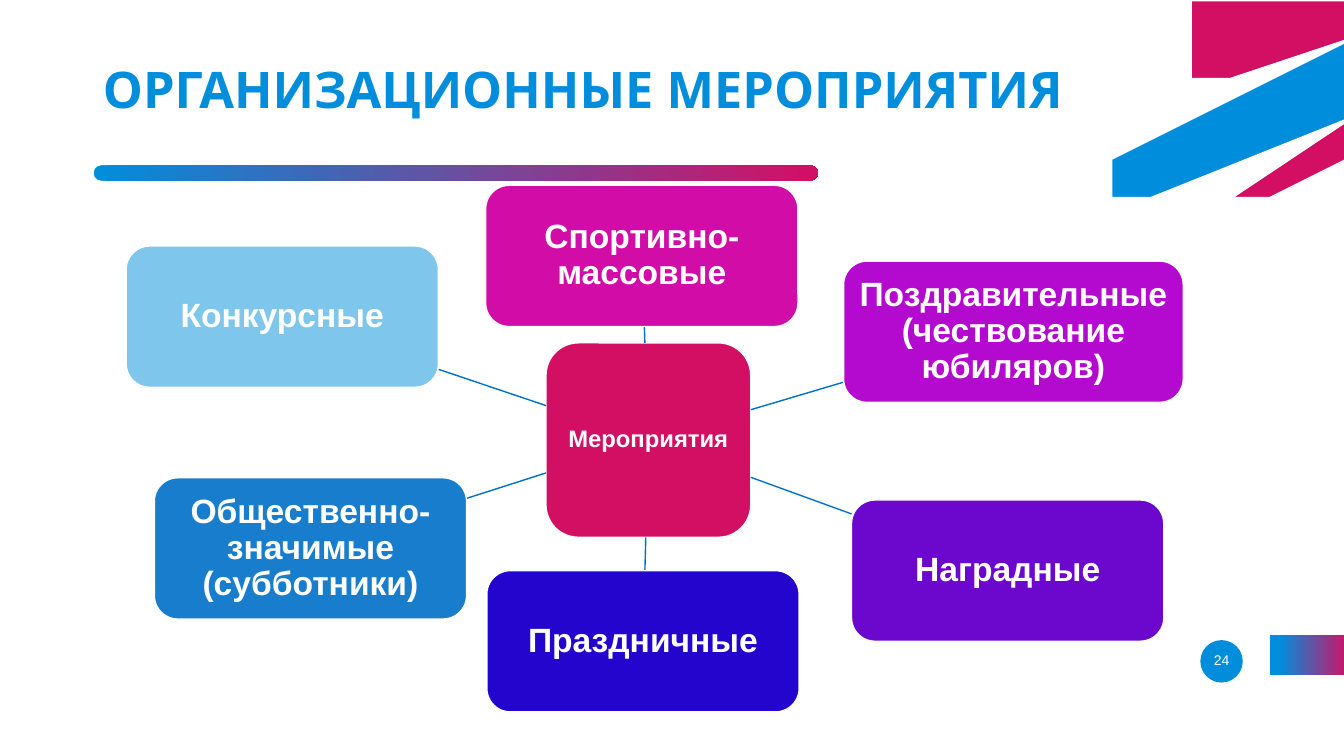
"""Build the slide of organisational events arranged around a central hub."""
from lxml import etree
from pptx import Presentation
from pptx.dml.color import RGBColor
from pptx.enum import shapes, text
from pptx.oxml import ns
from pptx.util import Cm, Pt

COLOURS = {
    "blue": "008EDC", "crimson": "D30F64", "white": "FFFFFF", "link": "006FC9",
    "magenta": "D20CA7", "purple": "B40AD0", "violet": "6C07CE",
    "indigo": "2305CD", "azure": "197DCE", "sky": "7FC6ED",
}


def paint(shape, colour, line_width=0):
    """Fill with one colour, or with a gradient when given a pair and its start."""
    shape.shadow.inherit = False
    if isinstance(colour, str):
        shape.fill.solid()
        shape.fill.fore_color.rgb = RGBColor.from_string(COLOURS[colour])
    else:
        shape.fill.gradient()
        shape.fill.gradient_angle = 0
        for stop, position, name in zip(shape.fill.gradient_stops, (colour[0], 1), colour[1:]):
            stop.position = position
            stop.color.rgb = RGBColor.from_string(COLOURS[name])
    if line_width:
        shape.line.color.rgb = RGBColor.from_string(COLOURS["white"])
        shape.line.width = Pt(line_width)
    else:
        shape.line.fill.background()


def write(shape, words, size, margin):
    """Centre white Arial text in a shape."""
    frame = shape.text_frame
    frame.word_wrap = True
    frame.vertical_anchor = text.MSO_ANCHOR.MIDDLE
    frame.margin_left = frame.margin_right = Cm(margin)
    frame.margin_top = frame.margin_bottom = Cm(margin)
    para = frame.paragraphs[0]
    para.alignment = text.PP_ALIGN.CENTER
    para.line_spacing = 0.9
    span = para.add_run()
    span.text = words
    span.font.name = "Arial"
    span.font.size = Pt(size)
    span.font.bold = size > 10
    span.font.color.rgb = RGBColor.from_string(COLOURS["white"])


deck = Presentation()
deck.slide_width, deck.slide_height = Cm(33.87), Cm(19.05)
page = deck.slides.add_slide(deck.slide_layouts[5])

outlines = [
    ("crimson", 2, [(30.18, 1.42), (30.18, 1.42, 30.4, 1.93, 30.91, 2.29), (33.87, 0.86),
                    (33.87, 0), (29.87, 0), (29.82, 0.38, 29.87, 0.84, 30.12, 1.35)]),
    ("blue", 2, [(28.47, 3.53), (28.47, 3.53, 27.56, 3.99, 27.97, 4.8), (27.97, 4.83),
                 (27.97, 4.83, 28.37, 5.64, 29.31, 5.18), (33.87, 2.97), (33.87, 0.91)]),
    ("crimson", 2, [(33.87, 3.2), (31.17, 4.52), (31.17, 4.52, 30.81, 4.7, 30.99, 5),
                    (30.99, 5.03), (30.99, 5.03, 31.14, 5.36, 31.5, 5.18), (33.87, 4.01)]),
    ((0.12, "blue", "crimson"), 0,
     [(32.05, 17.2), (33.87, 17.2), (33.87, 16.1), (32.05, 16.1),
      (32.05, 16.1, 31.52, 16.1, 31.52, 16.64), (31.52, 16.66),
      (31.52, 16.66, 31.52, 17.2, 32.05, 17.2)]),
]
for colour, rim, steps in outlines:
    points = []
    for step in steps:
        if len(step) == 2:
            points.append(step)
            continue
        x0, y0 = points[-1]
        x1, y1, x2, y2, x3, y3 = step
        for t in (i / 12 for i in range(1, 13)):
            a, b, c, d = (1 - t) ** 3, 3 * t * (1 - t) ** 2, 3 * t * t * (1 - t), t ** 3
            points.append((a * x0 + b * x1 + c * x2 + d * x3,
                           a * y0 + b * y1 + c * y2 + d * y3))
    builder = page.shapes.build_freeform(*points[0], scale=Cm(1))
    builder.add_line_segments(points[1:], close=True)
    paint(builder.convert_to_shape(), colour, rim)

rule = page.shapes.add_shape(
    shapes.MSO_SHAPE.ROUNDED_RECTANGLE, Cm(2.36), Cm(4.17), Cm(18.26), Cm(0.38))
rule.adjustments[0] = 0.5
paint(rule, (0, "blue", "crimson"))

badge = page.shapes.add_shape(shapes.MSO_SHAPE.OVAL, Cm(30.25), Cm(16.13), Cm(1.07), Cm(1.07))
paint(badge, "blue")
write(badge, "24", 10, 0)

title = page.shapes.title
title.left, title.top, title.width, title.height = Cm(2.34), Cm(1.02), Cm(25.15), Cm(2.62)
title.text_frame.vertical_anchor = text.MSO_ANCHOR.MIDDLE
para = title.text_frame.paragraphs[0]
para.alignment = text.PP_ALIGN.LEFT
para.line_spacing = 0.9
span = para.add_run()
span.text = "ОРГАНИЗАЦИОННЫЕ МЕРОПРИЯТИЯ"
span.font.name = "League Spartan"
span.font.size = Pt(36)
span.font.bold = True
span.font.color.rgb = RGBColor.from_string(COLOURS["blue"])

hub_x, hub_y, hub_width, hub_height = 16.34, 11.09, 5.16, 4.9
box_height = 3.56
events = [
    ("Спортивно-массовые", "magenta", 12.24, 4.67, 7.87),
    ("Поздравительные (чествование юбиляров)", "purple", 21.26, 6.58, 8.56),
    ("Наградные", "violet", 21.46, 12.6, 7.87),
    ("Праздничные", "indigo", 12.27, 14.38, 7.87),
    ("Общественно-значимые (субботники)", "azure", 3.89, 12.04, 7.87),
    ("Конкурсные", "sky", 3.18, 6.2, 7.87),
]

hub = page.shapes.add_shape(
    shapes.MSO_SHAPE.ROUNDED_RECTANGLE, Cm(hub_x - hub_width / 2), Cm(hub_y - hub_height / 2),
    Cm(hub_width), Cm(hub_height))
paint(hub, "crimson", 1)
write(hub, "Мероприятия", 17, 0.12)

for words, colour, left, top, width in events:
    dx = left + width / 2 - hub_x
    dy = top + box_height / 2 - hub_y
    start = min(hub_width / 2 / abs(dx), hub_height / 2 / abs(dy))
    end = 1 - min(width / 2 / abs(dx), box_height / 2 / abs(dy))
    link = page.shapes.add_connector(
        shapes.MSO_CONNECTOR.STRAIGHT, Cm(hub_x + dx * start), Cm(hub_y + dy * start),
        Cm(hub_x + dx * end), Cm(hub_y + dy * end))
    link.line.color.rgb = RGBColor.from_string(COLOURS["link"])
    link.line.width = Pt(1)
    etree.SubElement(link._element.spPr, ns.qn("a:effectLst"))

    box = page.shapes.add_shape(
        shapes.MSO_SHAPE.ROUNDED_RECTANGLE, Cm(left), Cm(top), Cm(width), Cm(box_height))
    paint(box, colour, 1)
    write(box, words, 24, 0.17)

deck.save("out.pptx")
